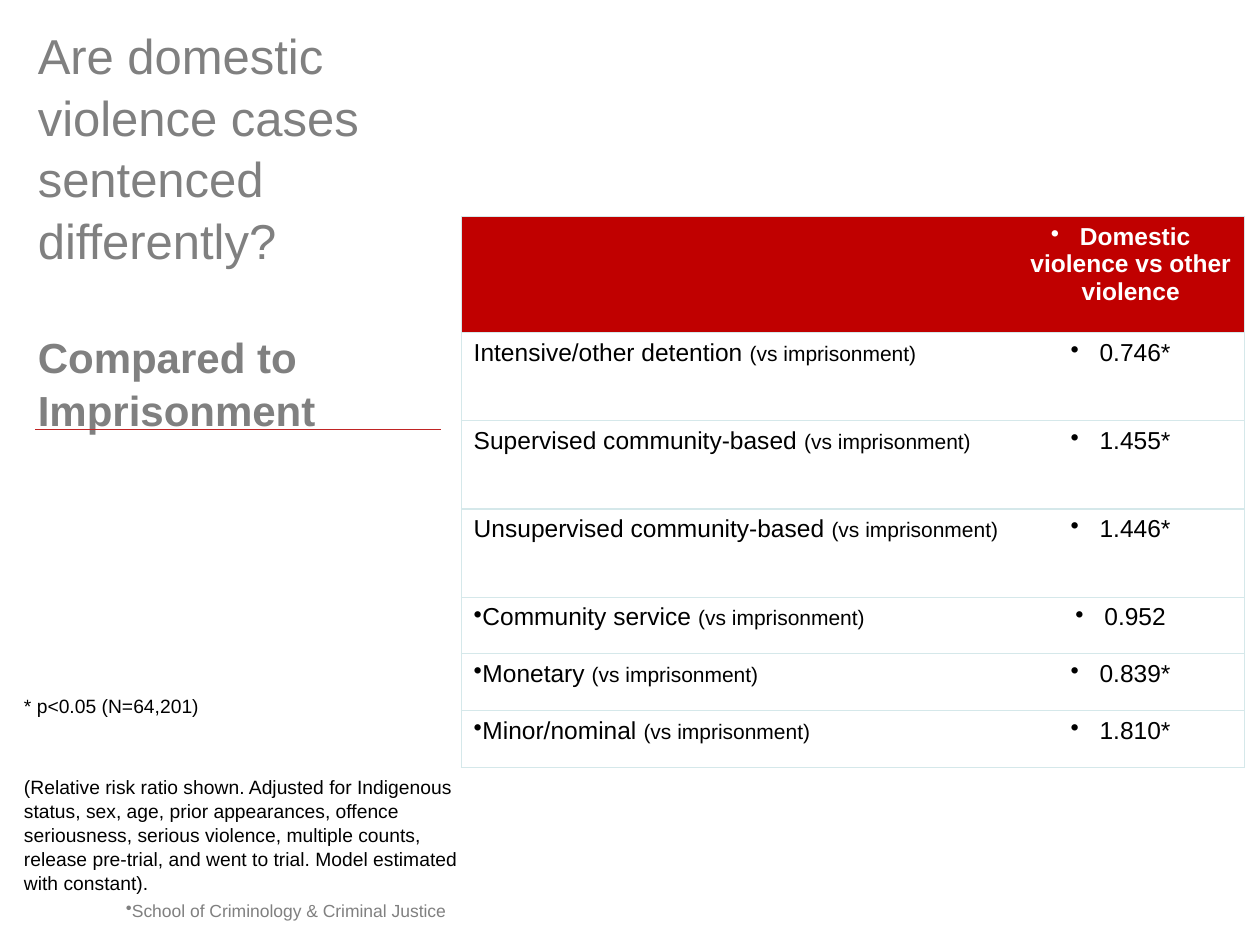
from dataclasses import dataclass

from lxml import etree
from pptx import Presentation
from pptx.dml.color import RGBColor
from pptx.enum.shapes import MSO_CONNECTOR
from pptx.enum.text import MSO_ANCHOR, MSO_AUTO_SIZE, PP_ALIGN
from pptx.oxml.ns import qn
from pptx.util import Inches, Pt

STRAIGHT = MSO_CONNECTOR.STRAIGHT
MIDDLE, TOP = MSO_ANCHOR.MIDDLE, MSO_ANCHOR.TOP
LEFT, CENTER = PP_ALIGN.LEFT, PP_ALIGN.CENTER
NO_AUTOFIT = MSO_AUTO_SIZE.NONE

GREY = RGBColor(0x80, 0x80, 0x80)
BLACK = RGBColor(0x00, 0x00, 0x00)
WHITE = RGBColor(0xFF, 0xFF, 0xFF)
HEADER_RED = RGBColor(0xC0, 0x00, 0x00)
RULE_RED = RGBColor(0xC0, 0x24, 0x24)
BORDER_BLUE = RGBColor(0xD5, 0xE8, 0xEA)

FONT = "Arial"
HANGING_BULLET = -0.23


@dataclass(frozen=True)
class Outcome:
    sentence: str
    ratio: str
    height: float
    bulleted: bool


OUTCOMES = [
    Outcome("Intensive/other detention ", "0.746*", 0.7, False),
    Outcome("Supervised community-based ", "1.455*", 0.7, False),
    Outcome("Unsupervised community-based ", "1.446*", 0.7, False),
    Outcome("Community service ", "0.952", 0.45, True),
    Outcome("Monetary ", "0.839*", 0.45, True),
    Outcome("Minor/nominal ", "1.810*", 0.45, True),
]
BASELINE = "(vs imprisonment)"
HEADER_HEIGHT = 0.92
COLUMN_WIDTHS = [4.41, 1.81]


def style_run(run, size: float, color: RGBColor, bold: bool = False) -> None:
    run.font.name = FONT
    run.font.size = Pt(size)
    run.font.bold = bold
    run.font.color.rgb = color


def set_bullet(paragraph, bullet: str = "", indent: float = 0) -> None:
    properties = paragraph._p.get_or_add_pPr()
    properties.set("marL", "0")
    properties.set("indent", str(Inches(indent)))
    if bullet:
        etree.SubElement(properties, qn("a:buChar")).set("char", bullet)
    else:
        etree.SubElement(properties, qn("a:buNone"))


def place(shape, left: float, top: float, width: float, height: float) -> None:
    shape.left, shape.top = Inches(left), Inches(top)
    shape.width, shape.height = Inches(width), Inches(height)
    shape.text_frame.word_wrap = True
    shape.text_frame.auto_size = NO_AUTOFIT


def set_borders(cell, visible_sides: str) -> None:
    properties = cell._tc.get_or_add_tcPr()
    for position, side in enumerate("LRTB"):
        line = etree.Element(qn(f"a:ln{side}"), w=str(Pt(0.75)))
        if side in visible_sides:
            fill = etree.SubElement(line, qn("a:solidFill"))
            etree.SubElement(fill, qn("a:srgbClr")).set("val", str(BORDER_BLUE))
        else:
            etree.SubElement(line, qn("a:noFill"))
        properties.insert(position, line)


def write_ratio(cell, text: str, color: RGBColor, bold: bool = False) -> None:
    paragraph = cell.text_frame.paragraphs[0]
    paragraph.text = text
    paragraph.alignment = CENTER
    set_bullet(paragraph, "•", HANGING_BULLET)
    style_run(paragraph.runs[0], 14, color, bold)


def write_sentence(cell, outcome: Outcome) -> None:
    paragraph = cell.text_frame.paragraphs[0]
    paragraph.text = outcome.sentence
    paragraph.add_run().text = BASELINE
    set_bullet(paragraph, "•" if outcome.bulleted else "")
    for run, size in zip(paragraph.runs, (14, 12)):
        style_run(run, size, BLACK)


def add_title(slide) -> None:
    title = slide.shapes.title
    place(title, 0.2, 0.36, 3.46, 2.91)
    frame = title.text_frame
    frame.vertical_anchor = MIDDLE
    frame.text = "Are domestic violence cases sentenced differently?\nCompared to Imprisonment"
    for paragraph, size in zip(frame.paragraphs, (28, 24)):
        paragraph.alignment = LEFT
        paragraph.line_spacing = 1.05
        style_run(paragraph.runs[0], size, GREY, size == 24)
    frame.paragraphs[1].space_before = Pt(34)


def add_notes_on_model(slide) -> None:
    body = slide.placeholders[1]
    place(body, 0.09, 5.5, 3.69, 1.88)
    frame = body.text_frame
    frame.margin_top, frame.margin_bottom = 0, Inches(0.04)
    frame.vertical_anchor = TOP
    frame.text = (
        "* p<0.05 (N=64,201)\n"
        "(Relative risk ratio shown. Adjusted for Indigenous status, sex, age, "
        "prior appearances, offence seriousness, serious violence, multiple counts, "
        "release pre-trial, and went to trial. Model estimated with constant)."
    )
    for paragraph, gap in zip(frame.paragraphs, (0, 33)):
        set_bullet(paragraph)
        paragraph.line_spacing = 1.04
        paragraph.space_before = Pt(gap)
        style_run(paragraph.runs[0], 11, BLACK)


def add_footer(slide) -> None:
    footer = slide.shapes.add_textbox(0, 0, 0, 0)
    place(footer, 0.9, 7.09, 8.66, 0.36)
    paragraph = footer.text_frame.paragraphs[0]
    paragraph.text = "School of Criminology & Criminal Justice"
    set_bullet(paragraph, "•")
    style_run(paragraph.runs[0], 10, GREY)


def add_rule(slide) -> None:
    rule = slide.shapes.add_connector(
        STRAIGHT, Inches(0.28), Inches(3.41), Inches(3.5), Inches(3.41)
    )
    rule.line.color.rgb = RULE_RED
    rule.line.width = Pt(0.25)
    etree.SubElement(rule._element.spPr, qn("a:effectLst"))


def add_ratio_table(slide) -> None:
    heights = [HEADER_HEIGHT] + [outcome.height for outcome in OUTCOMES]
    table = slide.shapes.add_table(
        len(heights), len(COLUMN_WIDTHS), Inches(3.66), Inches(1.72),
        Inches(sum(COLUMN_WIDTHS)), Inches(sum(heights)),
    ).table
    table.horz_banding = False
    for column, width in zip(table.columns, COLUMN_WIDTHS):
        column.width = Inches(width)
    for index, (row, height) in enumerate(zip(table.rows, heights)):
        row.height = Inches(height)
        for cell, outer_side in zip(row.cells, "LR"):
            if index == 0:
                cell.fill.solid()
                cell.fill.fore_color.rgb = HEADER_RED
            else:
                cell.fill.background()
            set_borders(cell, outer_side + ("T" if index == 0 else "TB"))
    write_ratio(table.cell(0, 1), "Domestic violence vs other violence", WHITE, True)
    for index, outcome in enumerate(OUTCOMES, start=1):
        write_sentence(table.cell(index, 0), outcome)
        write_ratio(table.cell(index, 1), outcome.ratio, BLACK)


def main() -> None:
    presentation = Presentation()
    presentation.slide_width, presentation.slide_height = Inches(10), Inches(7.5)
    slide = presentation.slides.add_slide(presentation.slide_layouts[1])
    add_title(slide)
    add_footer(slide)
    add_ratio_table(slide)
    add_rule(slide)
    add_notes_on_model(slide)
    presentation.save("out.pptx")


if __name__ == "__main__":
    main()
